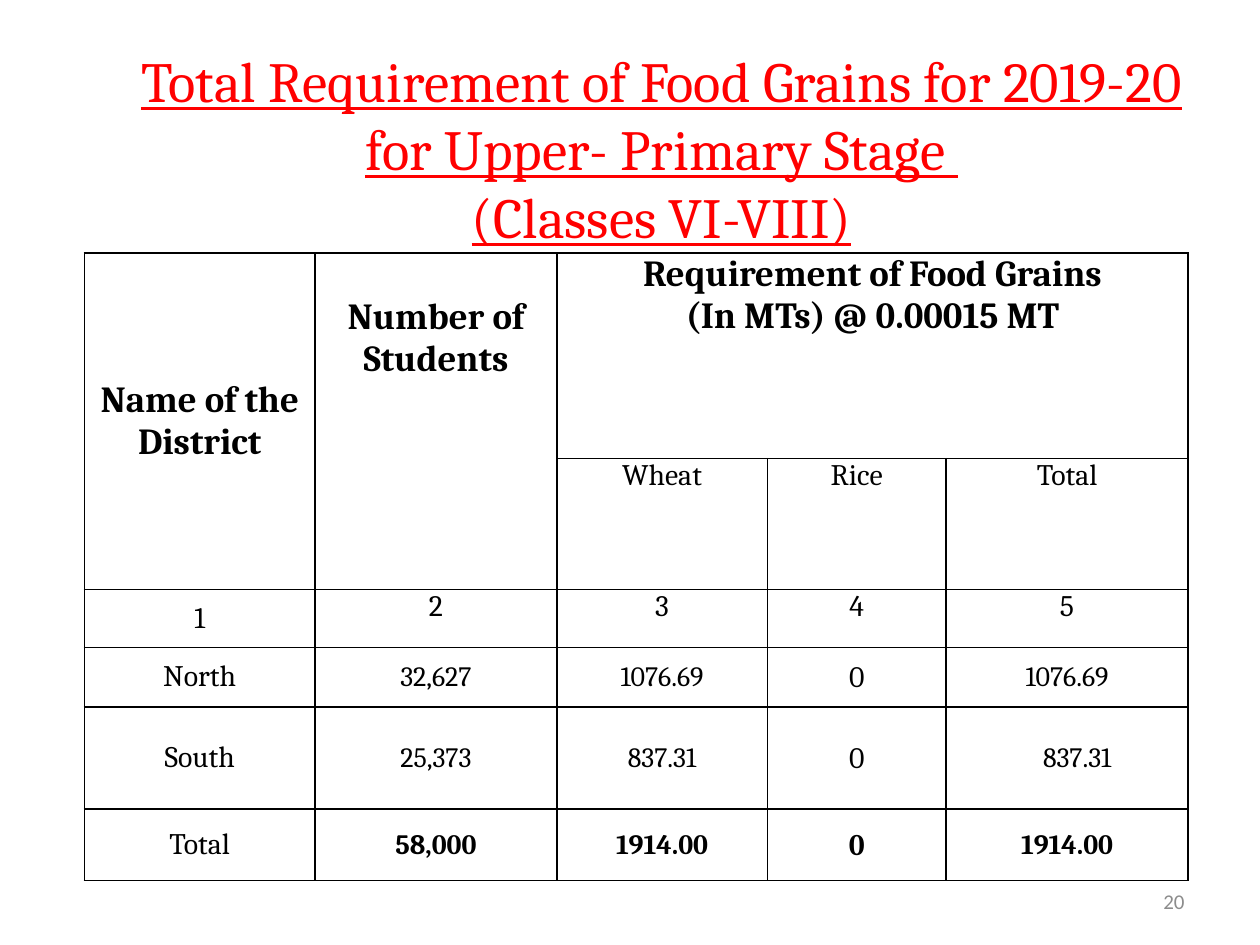
import pptx
import pptx.util
import pptx.dml.color
import pptx.enum.text
import pptx.oxml.ns
import lxml.etree

Inches = pptx.util.Inches
Pt = pptx.util.Pt
Color = pptx.dml.color.RGBColor
Align = pptx.enum.text.PP_ALIGN
Anchor = pptx.enum.text.MSO_ANCHOR

RED = Color(0xFF, 0x00, 0x00)
BLACK = Color(0x00, 0x00, 0x00)
GRAY = Color(0x8C, 0x8C, 0x8C)
WHITE = Color(0xFF, 0xFF, 0xFF)

COLS = [1.83, 1.92, 1.67, 1.42, 1.92]
ROWS = [1.63, 1.01, 0.46, 0.47, 0.81, 0.57]
HEADS = [
    ["Name of the District", "Number of Students",
     "Requirement of Food Grains\n(In MTs) @ 0.00015 MT", "", ""],
    ["", "", "Wheat", "Rice", "Total"],
    ["1", "2", "3", "4", "5"],
]
DATA = [
    ["North", "32,627", "1076.69", "0", "1076.69"],
    ["South", "25,373", "837.31", "0", "837.31"],
    ["Total", "58,000", "1914.00", "0", "1914.00"],
]


def style(frame, size, color, align, face="Cambria", bold=False, line=False):
    for para in frame.paragraphs:
        para.alignment = align
        for run in para.runs:
            font = run.font
            font.name = face
            font.size = Pt(size)
            font.bold = bold
            font.underline = line
            font.color.rgb = color


def add_text(slide, box, text, size, color, align, **looks):
    shape = slide.shapes.add_textbox(*map(Inches, box))
    frame = shape.text_frame
    frame.word_wrap = True
    frame.vertical_anchor = Anchor.MIDDLE
    frame.text = text
    style(frame, size, color, align, **looks)


def set_edges(cell):
    """Draw a 1 pt black line on all four sides of a cell."""
    props = cell._tc.get_or_add_tcPr()
    qn = pptx.oxml.ns.qn
    for side in ("lnL", "lnR", "lnT", "lnB"):
        line = lxml.etree.SubElement(props, qn("a:" + side), w=str(Pt(1)))
        fill = lxml.etree.SubElement(line, qn("a:solidFill"))
        lxml.etree.SubElement(fill, qn("a:srgbClr"), val=str(BLACK))


def set_cell(cell, text, size, bold, middle, pad, top):
    set_edges(cell)
    cell.fill.solid()
    cell.fill.fore_color.rgb = WHITE
    cell.margin_left = cell.margin_right = Inches(pad)
    cell.margin_top = Inches(top)
    cell.margin_bottom = 0
    cell.vertical_anchor = Anchor.MIDDLE if middle else Anchor.TOP
    if text:
        cell.text_frame.text = text
        style(cell.text_frame, size, BLACK, Align.CENTER, bold=bold)


def add_grid(slide, box):
    rows = HEADS + DATA
    shape = slide.shapes.add_table(len(ROWS), len(COLS), *map(Inches, box))
    table = shape.table
    table.first_row = table.horz_banding = False
    for col, width in zip(table.columns, COLS):
        col.width = Inches(width)
    for row, height in zip(table.rows, ROWS):
        row.height = Inches(height)
    for r, texts in enumerate(rows):
        for c, text in enumerate(texts):
            value = r >= len(HEADS) and c > 0
            size = 21 if r == 0 else 16 if value and c != 3 else 17
            bold = r == 0 or (value and r == len(rows) - 1)
            middle = value or c == 0
            pad, top = (0.01, 0.01) if value else (0.07, 0)
            set_cell(table.cell(r, c), text, size, bold, middle, pad, top)
    table.cell(0, 1).margin_top = Inches(0.34)
    table.cell(4, 4).margin_left = Inches(0.17)
    for first, last in (((0, 0), (1, 0)), ((0, 1), (1, 1)), ((0, 2), (0, 4))):
        table.cell(*first).merge(table.cell(*last))


def main():
    deck = pptx.Presentation()
    deck.slide_width = Inches(10)
    deck.slide_height = Inches(7.5)
    slide = deck.slides.add_slide(deck.slide_layouts[6])
    add_text(slide, (7.17, 6.95, 2.33, 0.4), "20", 12, GRAY, Align.RIGHT,
             face="Calibri")
    title = ("Total Requirement of Food Grains for 2019-20 "
             "for Upper- Primary Stage \v(Classes VI-VIII)")
    add_text(slide, (0.75, 0.41, 9, 1.53), title, 32.4, RED, Align.CENTER,
             line=True)
    add_grid(slide, (0.67, 2.01, sum(COLS), sum(ROWS)))
    deck.save("out.pptx")


if __name__ == "__main__":
    main()
